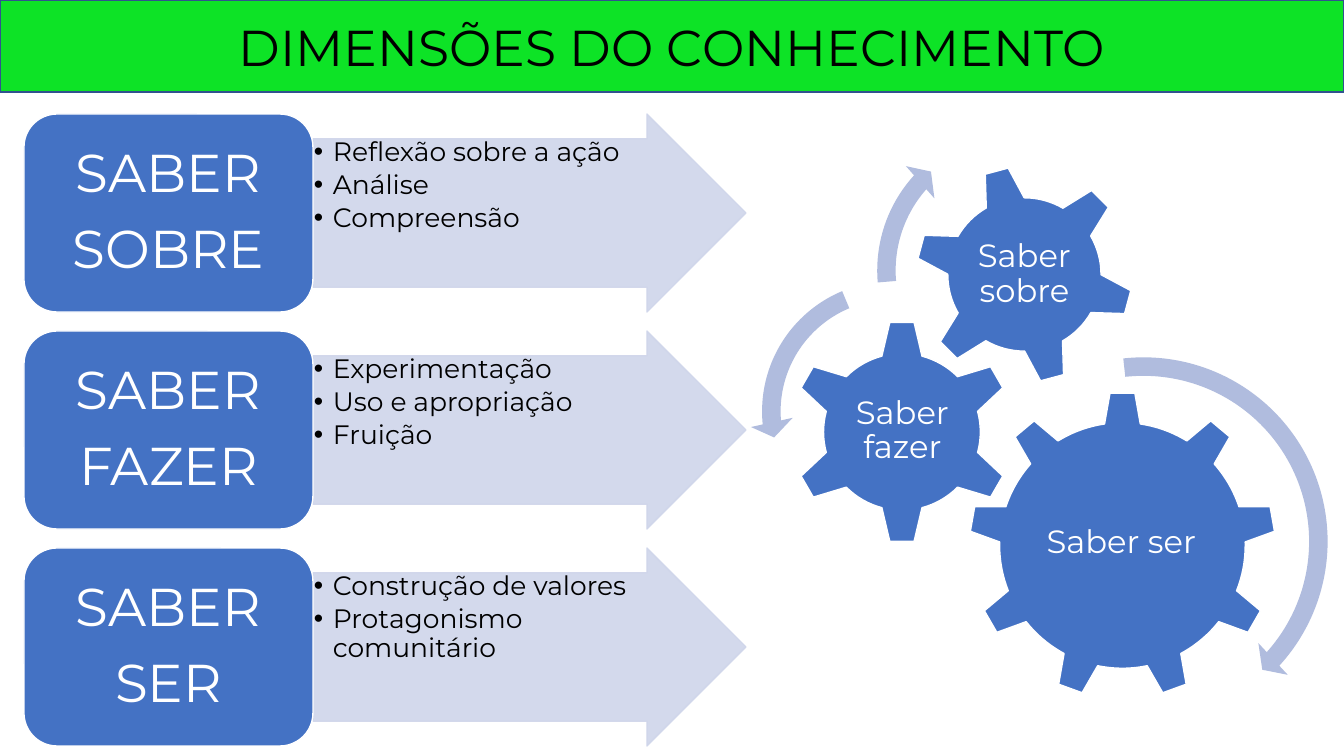
from lxml import etree
from pptx import Presentation
from pptx.dml.color import RGBColor
from pptx.enum.shapes import MSO_SHAPE
from pptx.enum.text import MSO_ANCHOR, PP_ALIGN
from pptx.oxml.ns import qn
from pptx.util import Pt

RECT = MSO_SHAPE.RECTANGLE
ROUND = MSO_SHAPE.ROUNDED_RECTANGLE
ARROW = MSO_SHAPE.RIGHT_ARROW
GEAR_SIX = MSO_SHAPE.GEAR_6
GEAR_NINE = MSO_SHAPE.GEAR_9
ARC = MSO_SHAPE.CIRCULAR_ARROW
LEFT_ARC = MSO_SHAPE.LEFT_CIRCULAR_ARROW
TOP, MIDDLE = MSO_ANCHOR.TOP, MSO_ANCHOR.MIDDLE
LEFT, CENTER = PP_ALIGN.LEFT, PP_ALIGN.CENTER

SCALE = 914400 / 100.8
FONT = "Montserrat"
COLORS = {
    "green": "0DE326", "navy": "31538F", "blue": "4472C4", "pale": "CFD5EA",
    "arc": "B0BCDE", "white": "FFFFFF", "black": "000000",
}

ROWS = [
    (["SABER", "SOBRE"], ["Reflexão sobre a ação", "Análise", "Compreensão"]),
    (["SABER", "FAZER"], ["Experimentação", "Uso e apropriação", "Fruição"]),
    (["SABER", "SER"], ["Construção de valores", "Protagonismo comunitário"]),
]
GEARS = [
    ("Saber ser", GEAR_NINE, (219, 279, 307), (61, 72, 183, 158), 0),
    ("Saber fazer", GEAR_SIX, (40, 207, 224), (57, 56, 111, 110), 0),
    ("Saber sobre", GEAR_SIX, (165, 52, 219), (48, 48, 123, 123), 345),
]
ARCS = [
    (ARC, (197, 232, 393), 47, (5, 42.2, 263.7), 55),
    (LEFT_ARC, (0, 156, 285), 65, (7.2, 174.8, 247.3), 75),
    (ARC, (115, 4, 307), 60, (6.6, 221.9, 175.1), 70),
]


def px(num):
    return round(num * SCALE)


def rgb(name):
    return RGBColor.from_string(COLORS[name])


def fade(shape, share):
    for color in shape._element.spPr.iter(qn("a:srgbClr")):
        etree.SubElement(color, qn("a:alpha"), val=str(share * 1000))


def draw(slide, kind, box, fill, line=None):
    shape = slide.shapes.add_shape(kind, *map(px, box))
    shape.shadow.inherit = False
    shape.fill.solid()
    shape.fill.fore_color.rgb = rgb(fill)
    if line:
        shape.line.color.rgb = rgb(line)
        shape.line.width = Pt(1)
    else:
        shape.line.fill.background()
    return shape


def bullet(para):
    props = para._p.get_or_add_pPr()
    props.set("marL", str(px(19)))
    props.set("indent", str(px(-19)))
    etree.SubElement(props, qn("a:buFont"), typeface="Arial")
    etree.SubElement(props, qn("a:buChar"), char="•")


def write(slide, box, lines, size, color="white", align=CENTER, anchor=MIDDLE,
          pad=(3, 3), after=0, space=0.9, dots=False):
    frame = slide.shapes.add_textbox(*map(px, box)).text_frame
    frame.word_wrap = True
    frame.vertical_anchor = anchor
    frame.margin_left = frame.margin_right = px(pad[0])
    frame.margin_top = frame.margin_bottom = px(pad[1])
    for num, line in enumerate(lines):
        para = frame.add_paragraph() if num else frame.paragraphs[0]
        para.alignment = align
        para.line_spacing = space
        para.space_after = Pt(after)
        if dots:
            bullet(para)
        run = para.add_run()
        run.text = line
        run.font.name = FONT
        run.font.size = Pt(size)
        run.font.color.rgb = rgb(color)


def banner(slide, box):
    draw(slide, RECT, box, "green", "navy")
    write(slide, box, ["DIMENSÕES DO CONHECIMENTO"], 36, "black",
          pad=(10, 5), space=1.0)


def row(slide, box, label, points):
    x, y, wide, high = box
    split = 289
    arrow = draw(slide, ARROW, (x + split, y, wide - split, high), "pale", "pale")
    arrow.adjustments[0] = 0.75
    arrow.adjustments[1] = 0.5
    fade(arrow, 90)
    write(slide, (x + split, y + high // 8, 359, high * 3 // 4), points, 19,
          "black", LEFT, TOP, pad=(1, 1), after=3, dots=True)
    draw(slide, ROUND, (x, y, split, high), "blue", "white")
    write(slide, (x + 10, y + 10, split - 20, high - 20), label, 38,
          pad=(16, 8), after=13)


def rows(slide, box):
    x, y, wide, high = box
    gap = 19
    tall = (high - gap * (len(ROWS) - 1)) / len(ROWS)
    for num, (label, points) in enumerate(ROWS):
        row(slide, (x, y + num * (tall + gap), wide, tall), label, points)


def gears(slide, spot):
    left, top = spot
    for name, kind, (x, y, size), (dx, dy, wide, high), turn in GEARS:
        x, y = left + x, top + y
        gear = draw(slide, kind, (x, y, size, size), "blue", "white")
        gear.rotation = turn
        write(slide, (x + dx, y + dy, wide, high), [name], 23, after=8)
    for kind, (x, y, size), thick, angles, head in ARCS:
        arc = draw(slide, kind, (left + x, top + y, size, size), "arc")
        turns = [angle * 0.6 for angle in angles]
        for num, value in enumerate([thick / 1000, *turns, head / 1000]):
            arc.adjustments[num] = value


def main():
    deck = Presentation()
    deck.slide_width, deck.slide_height = px(1344), px(756)
    slide = deck.slides.add_slide(deck.slide_layouts[6])
    banner(slide, (0, 0, 1344, 92))
    rows(slide, (24, 114, 722, 632))
    gears(slide, (750, 113))
    deck.save("out.pptx")


if __name__ == "__main__":
    main()
